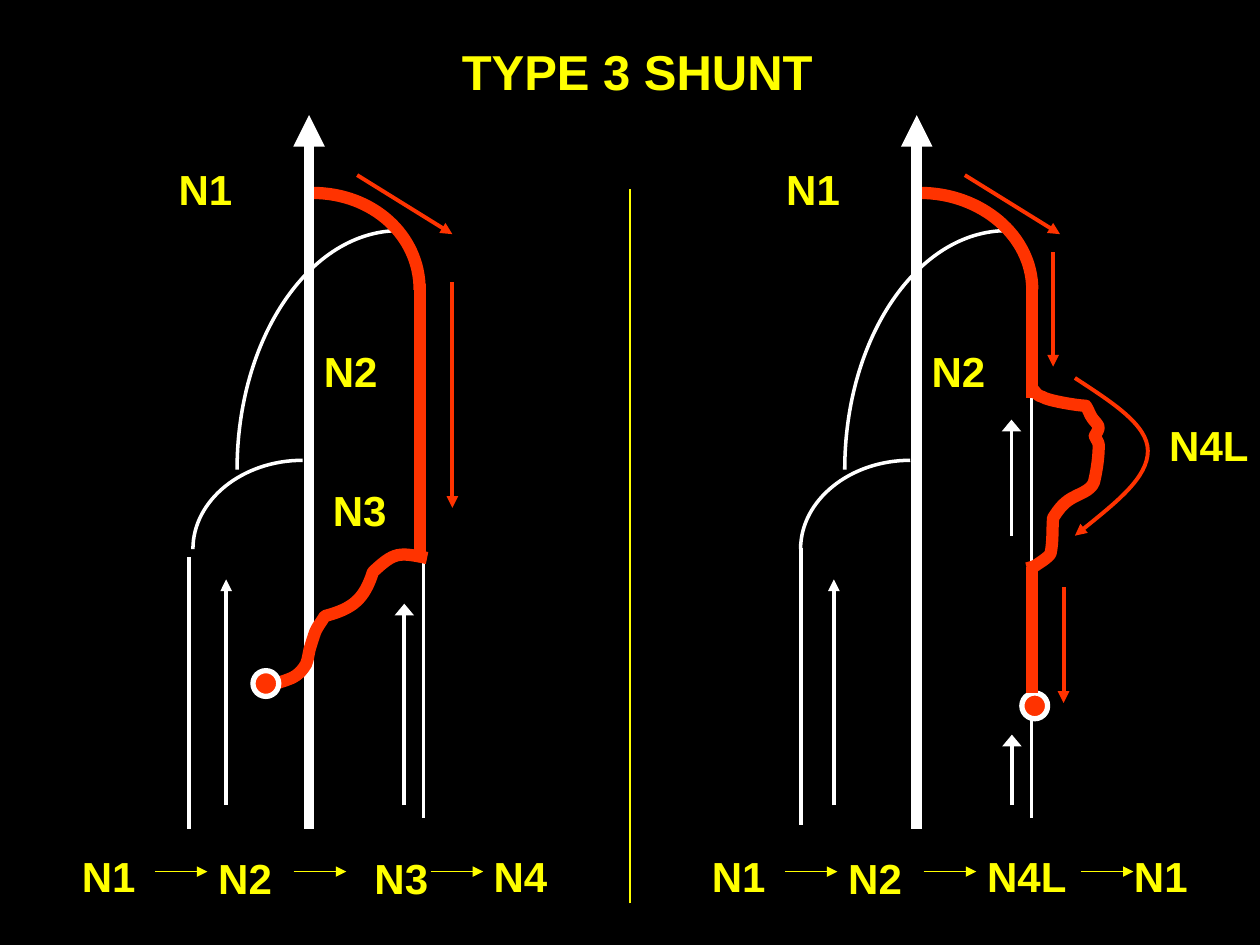
import pptx
import pptx.dml.color
import pptx.enum.shapes
import pptx.enum.text
import pptx.oxml.ns
import pptx.util
from lxml import etree
from pptx.util import Cm

BLACK = pptx.dml.color.RGBColor(0x00, 0x00, 0x00)
WHITE = pptx.dml.color.RGBColor(0xFF, 0xFF, 0xFF)
RED = pptx.dml.color.RGBColor(0xFF, 0x33, 0x00)
YELLOW = pptx.dml.color.RGBColor(0xFF, 0xFF, 0x00)

VEIN, REFLUX, TRUNK, FLOW, HAIR = 2, 7, 6, 2.25, 0.75  # line widths in points
RIGHT_SHIFT = 12.25  # from the left leg to the right leg, in cm


def bend(freeform):
    """Turn each three straight segments into one cubic curve."""
    outline = next(freeform._element.iter(pptx.oxml.ns.qn("a:path")))
    segments = outline.findall(pptx.oxml.ns.qn("a:lnTo"))
    for i in range(0, len(segments), 3):
        cubic = etree.Element(pptx.oxml.ns.qn("a:cubicBezTo"))
        segments[i].addprevious(cubic)
        for segment in segments[i:i + 3]:
            cubic.append(segment[0])
            outline.remove(segment)


class Diagram:
    """Style and current slide; lengths are in cm, moved right by shift."""

    font = "Arial"

    def __init__(self, slide):
        self.slide = slide
        self.shift = 0
        slide.background.fill.solid()
        slide.background.fill.fore_color.rgb = BLACK

    def x(self, value):
        return Cm(value + self.shift)

    def stroke(self, shape, color, width, head=None):
        """Set the line; head is the arrowhead width, such as 'med'."""
        shape.line.color.rgb = color
        shape.line.width = pptx.util.Pt(width)
        if head:
            etree.SubElement(shape.line._get_or_add_ln(), pptx.oxml.ns.qn("a:tailEnd"),
                             type="triangle", w=head, len="med")

    def line(self, x1, y1, x2, y2, color, width, head=None):
        line = self.slide.shapes.add_connector(
            pptx.enum.shapes.MSO_CONNECTOR.STRAIGHT,
            self.x(x1), Cm(y1), self.x(x2), Cm(y2))
        self.stroke(line, color, width, head)
        etree.SubElement(line._element.spPr, pptx.oxml.ns.qn("a:effectLst"))

    def vertical(self, x, y1, y2, color, width, head=None):
        self.line(x, y1, x, y2, color, width, head)

    def curve(self, points, color, width, head=None):
        """Draw chained cubic curves: a start, then three points for each."""
        (start_x, start_y), *controls = points
        builder = self.slide.shapes.build_freeform(self.x(start_x), Cm(start_y))
        builder.add_line_segments([(self.x(x), Cm(y)) for x, y in controls], close=False)
        curve = builder.convert_to_shape()
        bend(curve)
        curve.fill.background()
        curve.shadow.inherit = False
        self.stroke(curve, color, width, head)

    def escape_point(self, x, y):
        ring = self.slide.shapes.add_shape(
            pptx.enum.shapes.MSO_SHAPE.OVAL, self.x(x), Cm(y), Cm(0.52), Cm(0.52))
        ring.fill.solid()
        ring.fill.fore_color.rgb = RED
        ring.shadow.inherit = False
        self.stroke(ring, WHITE, 3)

    def text(self, content, x, y, width=1.09, height=1.02, size=24, color=YELLOW,
             bold=True):
        box = self.slide.shapes.add_textbox(self.x(x), Cm(y), Cm(width), Cm(height))
        frame = box.text_frame
        frame.margin_left = frame.margin_right = 0
        frame.margin_top = frame.margin_bottom = 0
        frame.word_wrap = False
        frame.auto_size = pptx.enum.text.MSO_AUTO_SIZE.SHAPE_TO_FIT_TEXT
        run = frame.paragraphs[0].add_run()
        run.text = content
        run.font.name = self.font
        run.font.size = pptx.util.Pt(size)
        run.font.bold = bold
        run.font.color.rgb = color


def draw_leg(diagram, reflux_x, reflux_end, vein_x, vein_span, down_x, down_span, up_top):
    """Draw what both legs share, with the measures in which they differ."""
    diagram.curve([(3.89, 11.07), (3.89, 10.08), (4.89, 9.28), (6.1, 9.28)], WHITE, VEIN)
    diagram.vertical(vein_x, *vein_span, WHITE, VEIN)
    diagram.vertical(8.54, 5.64, 16.48, WHITE, VEIN)
    diagram.curve([(4.78, 9.47), (4.78, 6.81), (6.25, 4.65), (8.05, 4.65)], WHITE, VEIN)
    diagram.curve([(6.3, 3.89), (7.52, 3.89), (reflux_x, 4.75), (reflux_x, 5.84)],
                  RED, REFLUX)
    diagram.vertical(reflux_x, 5.72, reflux_end, RED, REFLUX)
    diagram.text("N2", 6.53, 6.96)
    diagram.vertical(6.23, 16.71, 2.32, WHITE, TRUNK, "med")
    diagram.text("N1", 3.6, 3.29)
    diagram.line(7.2, 3.53, 9.12, 4.72, RED, FLOW, "med")
    diagram.vertical(down_x, *down_span, RED, FLOW, "med")
    diagram.vertical(8.15, 16.23, up_top, WHITE, FLOW, "lg")
    diagram.vertical(4.56, 16.23, 11.68, WHITE, FLOW, "med")


def draw_pathway(diagram, stations, arrow_starts):
    for name, x, y, width in stations:
        diagram.text(name, x, y, width=width)
    for start in arrow_starts:
        diagram.line(start, 17.57, start + 1.06, 17.57, YELLOW, HAIR, "med")


def draw_left(diagram):
    draw_leg(diagram, reflux_x=8.46, reflux_end=11.2, vein_x=3.81,
             vein_span=(11.23, 16.71), down_x=9.12, down_span=(5.69, 10.24), up_top=12.17)
    tributary = [
        (8.61, 11.25), (8.03, 11.13), (7.95, 11.13), (7.52, 11.53),
        (7.34, 12.09), (7.11, 12.27), (6.55, 12.42),
        (6.35, 12.73), (6.38, 12.65), (6.27, 13),
        (6.22, 13.13), (6.22, 13.28), (6.17, 13.39),
        (5.92, 13.82), (5.61, 13.64), (5.28, 13.97)]
    diagram.curve(tributary, RED, REFLUX)
    diagram.text("N3", 6.71, 9.76)
    diagram.escape_point(5.1, 13.52)
    draw_pathway(diagram,
                 [("N1", 1.65, 17.15, 1.09), ("N2", 4.4, 17.19, 1.09),
                  ("N3", 7.55, 17.19, 1.09), ("N4", 9.95, 17.15, 1.09)],
                 (3.12, 5.92, 8.68))


def draw_right(diagram):
    diagram.shift = RIGHT_SHIFT
    draw_leg(diagram, reflux_x=8.56, reflux_end=8.03, vein_x=3.9,
             vein_span=(11.05, 16.64), down_x=8.98, down_span=(5.08, 7.39), up_top=14.81)
    diagram.shift = 0
    diagram.text("N4L", 23.57, 8.46, width=1.6)
    diagram.escape_point(20.6, 13.97)
    collateral = [
        (20.8, 7.82), (20.88, 7.9), (20.9, 7.98), (21.01, 8),
        (21.13, 8.08), (21.74, 8.18), (21.89, 8.18),
        (21.95, 8.28), (21.97, 8.36), (22.02, 8.43),
        (22.05, 8.48), (22.12, 8.53), (22.15, 8.61),
        (22.15, 8.66), (22.1, 8.74), (22.07, 8.79),
        (22.1, 8.86), (22.15, 8.92), (22.15, 8.97),
        (22.15, 9.19), (22.12, 9.42), (22.07, 9.65),
        (22.05, 9.86), (21.82, 9.93), (21.67, 10.01),
        (21.46, 10.11), (21.36, 10.24), (21.23, 10.44),
        (21.21, 10.67), (21.23, 10.92), (21.18, 11.15),
        (21.16, 11.23), (20.9, 11.38), (20.88, 11.4),
        (20.83, 11.43), (20.7, 11.46), (20.7, 11.46)]
    diagram.curve(collateral, RED, REFLUX)
    diagram.vertical(20.81, 11.43, 13.97, RED, REFLUX)
    diagram.vertical(21.44, 11.84, 14.17, RED, FLOW, "med")
    bypass = [(21.67, 7.62), (22.4, 8.1), (23.14, 8.56), (23.14, 9.09),
              (23.14, 9.63), (22.4, 10.21), (21.67, 10.8)]
    diagram.curve(bypass, RED, FLOW, "med")
    diagram.vertical(20.39, 10.8, 8.46, WHITE, FLOW, "lg")
    draw_pathway(diagram,
                 [("N1", 14.35, 17.15, 1.09), ("N2", 17.1, 17.19, 1.09),
                  ("N4L", 19.9, 17.15, 1.6), ("N1", 22.86, 17.15, 1.09)],
                 (15.82, 18.62, 21.79))


def main():
    deck = pptx.Presentation()
    deck.slide_width, deck.slide_height = Cm(25.4), Cm(19.05)
    diagram = Diagram(deck.slides.add_slide(deck.slide_layouts[6]))
    diagram.text("TYPE 3 SHUNT", 9.31, 0.84, width=7.09, height=1.19, size=28)
    draw_right(diagram)
    diagram.vertical(12.7, 18.21, 3.81, YELLOW, HAIR)
    draw_left(diagram)
    deck.save("out.pptx")


if __name__ == "__main__":
    main()
